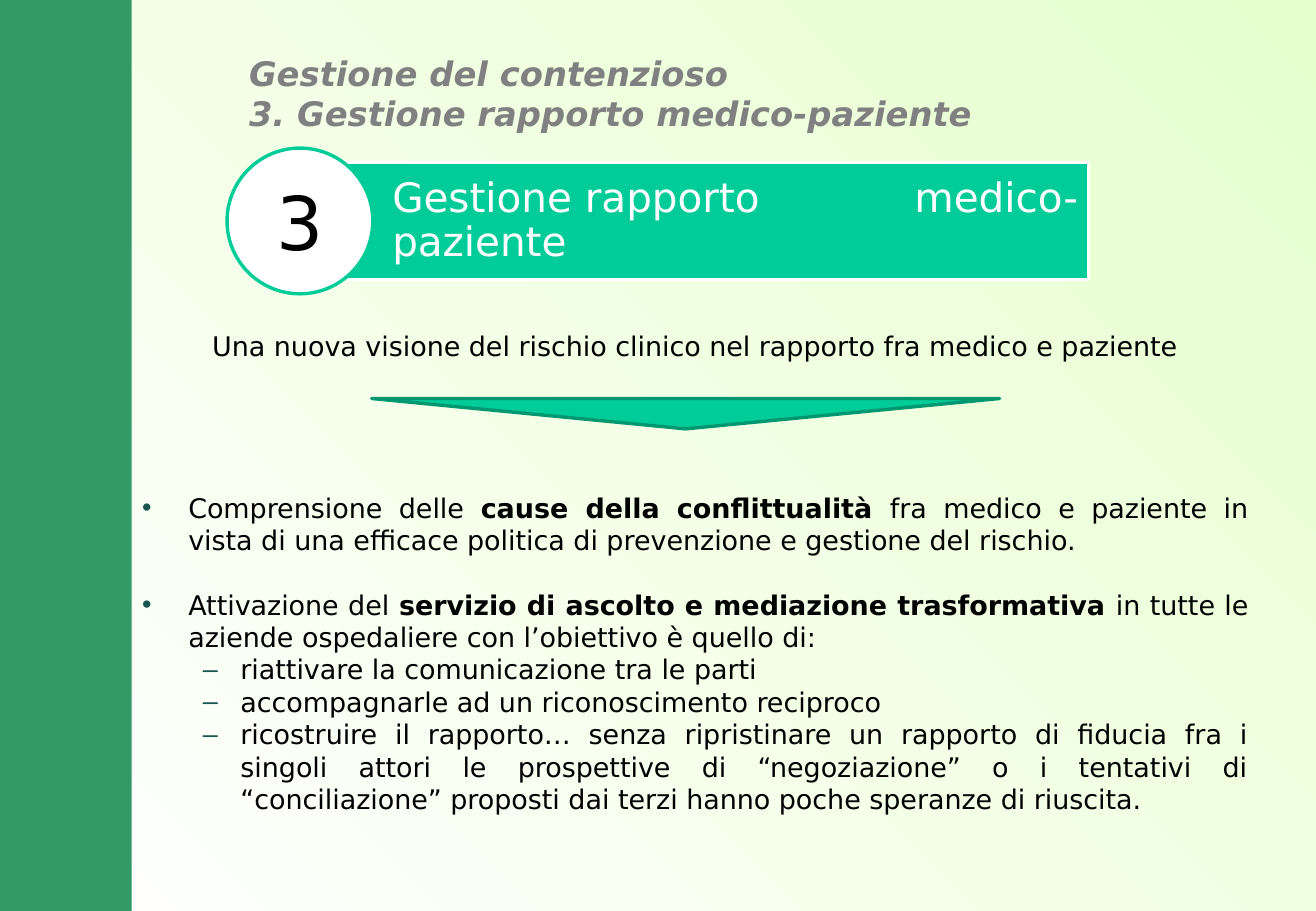
from lxml import etree
from pptx import Presentation
from pptx.dml.color import RGBColor
from pptx.enum import shapes, text
from pptx.oxml import ns
from pptx.util import Pt

COLOURS = {
    "side": "339966", "pale": "E6FFCD", "white": "FFFFFF", "black": "000000",
    "heading": "808080", "accent": "00CC99", "edge": "009771", "bullet": "185750",
}
FONT = "DejaVu Sans"


def style(font, size, colour, bold=False, italic=False):
    font.name, font.size, font.bold, font.italic = FONT, Pt(size), bold, italic
    font.color.rgb = RGBColor.from_string(COLOURS[colour])


def add_filled(kind, left, top, width, height, fill, line=None):
    """Add a shape without shadow; with no line colour it has no outline."""
    shape = slide.shapes.add_shape(kind, Pt(left), Pt(top), Pt(width), Pt(height))
    shape.shadow.inherit = False
    shape.fill.solid()
    shape.fill.fore_color.rgb = RGBColor.from_string(COLOURS[fill])
    if line:
        shape.line.color.rgb = RGBColor.from_string(COLOURS[line])
        shape.line.width = Pt(2)
    else:
        shape.line.fill.background()
    return shape


deck = Presentation()
deck.slide_width, deck.slide_height = Pt(780), Pt(540)
slide = deck.slides.add_slide(deck.slide_layouts[1])

# Background and side band
backdrop = slide.background.fill
backdrop.gradient()
backdrop.gradient_angle = 45
for stop, colour, position in zip(backdrop.gradient_stops, ("white", "pale"), (0, 1)):
    stop.color.rgb = RGBColor.from_string(COLOURS[colour])
    stop.position = position
add_filled(shapes.MSO_SHAPE.RECTANGLE, 0, 0, 78, 540, "side")

# Title
title = slide.shapes.title
title.left, title.top, title.width, title.height = Pt(140.4), Pt(27.4), Pt(443.5), Pt(55.4)
frame = title.text_frame
frame.text = "Gestione del contenzioso\n3. Gestione rapporto medico-paziente"
frame.word_wrap = False
frame.auto_size = text.MSO_AUTO_SIZE.NONE
frame.vertical_anchor = text.MSO_ANCHOR.TOP
for para in frame.paragraphs:
    para.alignment = text.PP_ALIGN.LEFT
    for span in para.runs:
        style(span.font, 20, "heading", bold=True, italic=True)

# Body: level (None for the lead line), space before, spans as (text, bold)
points = [
    (None, 0, [("Una nuova visione del rischio clinico nel rapporto fra medico e paziente", False)]),
    (0, 77, [("Comprensione delle ", False), ("cause della conflittualità ", True),
             ("fra medico e paziente in vista di una efficace politica di prevenzione "
              "e gestione del rischio.", False)]),
    (0, 19, [("Attivazione del ", False), ("servizio di ascolto e mediazione trasformativa ", True),
             ("in tutte le aziende ospedaliere con l’obiettivo è quello di:", False)]),
    (1, 0, [("riattivare la comunicazione tra le parti", False)]),
    (1, 0, [("accompagnarle ad un riconoscimento reciproco", False)]),
    (1, 0, [("ricostruire il rapporto… senza ripristinare un rapporto di fiducia fra i singoli "
             "attori le prospettive di “negoziazione” o i tentativi di “conciliazione” proposti "
             "dai terzi hanno poche speranze di riuscita.", False)]),
]
bullets = [("•", 27.4, -27.4), ("–", 58.3, -22.3)]

body = slide.placeholders[1]
body.left, body.top, body.width, body.height = Pt(77), Pt(138.2), Pt(670.3), Pt(401.8)
frame = body.text_frame
frame.word_wrap = True
frame.auto_size = text.MSO_AUTO_SIZE.NONE
frame.vertical_anchor = text.MSO_ANCHOR.MIDDLE
for index, (level, gap, spans) in enumerate(points):
    para = frame.paragraphs[0] if index == 0 else frame.add_paragraph()
    props = para._p.get_or_add_pPr()
    if level is None:
        props.set("marL", "0")
        props.set("indent", "0")
        etree.SubElement(props, ns.qn("a:buNone"))
        para.alignment = text.PP_ALIGN.CENTER
    else:
        mark, margin, indent = bullets[level]
        para.level = level
        props.set("marL", str(Pt(margin)))
        props.set("indent", str(Pt(indent)))
        tint = etree.SubElement(props, ns.qn("a:buClr"))
        etree.SubElement(tint, ns.qn("a:srgbClr"), val=COLOURS["bullet"])
        etree.SubElement(props, ns.qn("a:buChar"), char=mark)
        para.alignment = text.PP_ALIGN.JUSTIFY
    para.space_before, para.space_after = Pt(gap), Pt(0)
    for words, bold in spans:
        span = para.add_run()
        span.text = words
        style(span.font, 16, "black", bold=bold)

# Banner, with a tab stop between its words
banner = add_filled(shapes.MSO_SHAPE.RECTANGLE, 177.8, 96.5, 467.3, 69.1, "accent", "white")
frame = banner.text_frame
frame.word_wrap = True
frame.vertical_anchor = text.MSO_ANCHOR.MIDDLE
frame.margin_left = Pt(54.7)
frame.margin_top = frame.margin_right = frame.margin_bottom = Pt(5)
para = frame.paragraphs[0]
para.text = "Gestione rapporto\tmedico-paziente"
tabs = etree.SubElement(para._p.get_or_add_pPr(), ns.qn("a:tabLst"))
etree.SubElement(tabs, ns.qn("a:tab"), pos=str(Pt(309.5)), algn="l")
para.alignment = text.PP_ALIGN.LEFT
para.line_spacing = 0.9
style(para.runs[0].font, 24, "white")

# Numbered circle
circle = add_filled(shapes.MSO_SHAPE.OVAL, 134.6, 87.8, 86.4, 86.4, "white", "accent")
frame = circle.text_frame
frame.vertical_anchor = text.MSO_ANCHOR.MIDDLE
frame.text = "3"
frame.paragraphs[0].alignment = text.PP_ALIGN.CENTER
style(frame.paragraphs[0].runs[0].font, 44, "black")

# Downward pointer
pointer = add_filled(shapes.MSO_SHAPE.ISOSCELES_TRIANGLE, 220.3, 236.2, 372.2, 18, "accent", "edge")
pointer.rotation = 180

deck.save("out.pptx")
